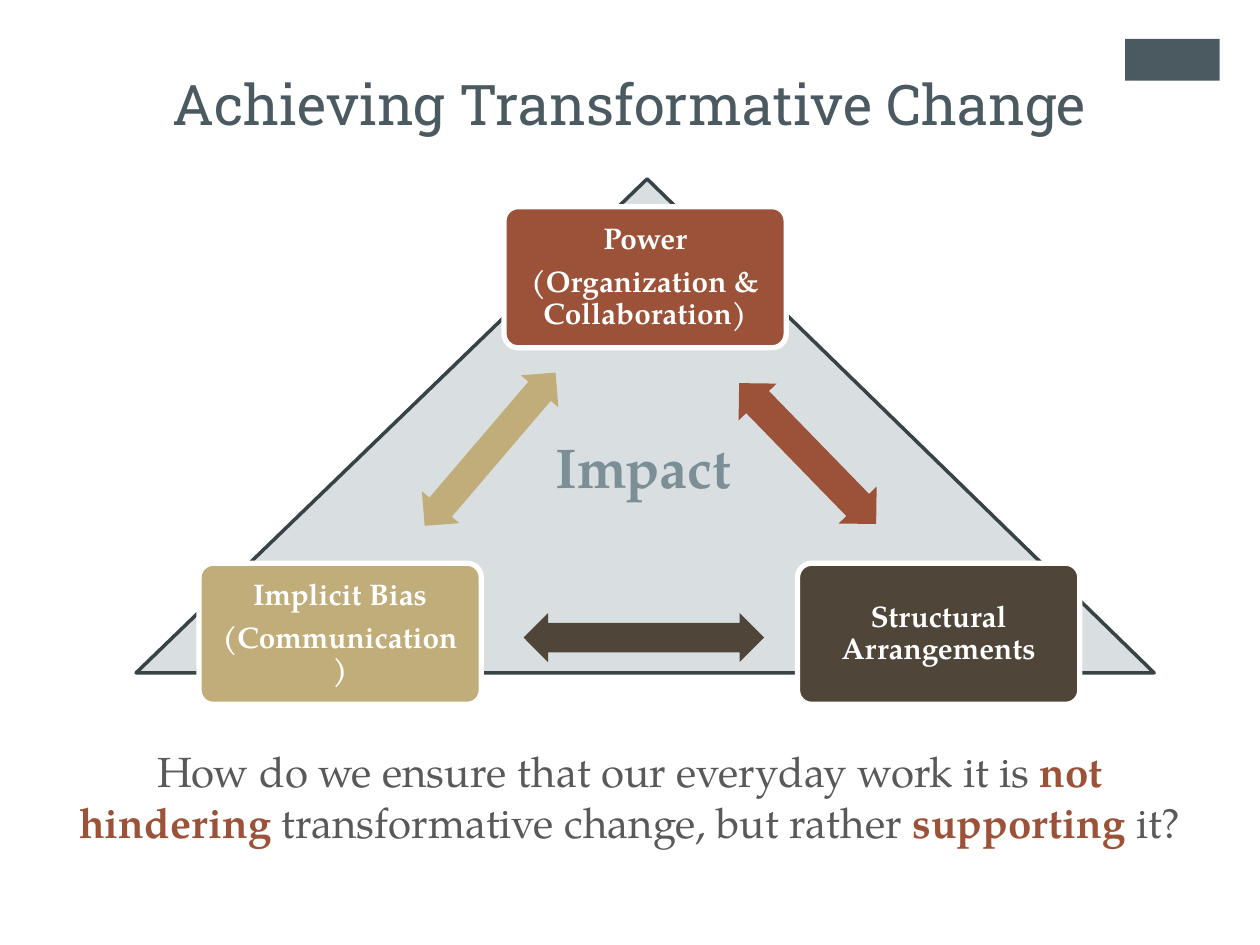
from dataclasses import dataclass
from pptx import Presentation
from pptx.dml.color import RGBColor
from pptx.enum.shapes import MSO_SHAPE
from pptx.enum.text import MSO_ANCHOR, PP_ALIGN
from pptx.util import Inches, Pt

COLS, ROWS = 100, 75


@dataclass(frozen=True)
class Theme:
    head: str = "Roboto Slab"
    body: str = "TeX Gyre Pagella"
    slate: str = "4B5A60"
    mist: str = "D9DFE1"
    edge: str = "374347"
    steel: str = "7C8F97"
    gray: str = "595959"
    rust: str = "9C5238"
    brown: str = "504539"
    sand: str = "C1AD79"
    white: str = "FFFFFF"
    big: int = 32
    mid: int = 24
    small: int = 17


class Deck:
    """Theme and current slide; lengths are columns and rows of the grid."""

    def __init__(self, theme):
        self.theme = theme
        self.file = Presentation()
        self.file.slide_width, self.file.slide_height = Inches(10), Inches(7.5)
        self.slide = self.file.slides.add_slide(self.file.slide_layouts[6])

    def area(self, left, top, width, height):
        col, row = self.file.slide_width / COLS, self.file.slide_height / ROWS
        return [round(n * unit) for n, unit in
                ((left, col), (top, row), (width, col), (height, row))]

    def shape(self, kind, area, fill, line=None, adjust=(), turn=0):
        item = self.slide.shapes.add_shape(kind, *self.area(*area))
        item.shadow.inherit = False
        item.rotation = turn
        for i, value in enumerate(adjust):
            item.adjustments[i] = value
        item.fill.solid()
        item.fill.fore_color.rgb = RGBColor.from_string(fill)
        if line:
            color, width = line
            item.line.color.rgb = RGBColor.from_string(color)
            item.line.width = Pt(width)
        else:
            item.line.fill.background()
        return item

    def put_text(self, frame, paras, font, form):
        """Fill a frame; each paragraph is a list of (text, color, bold) runs."""
        frame.word_wrap = True
        for i, runs in enumerate(paras):
            para = frame.paragraphs[0] if i == 0 else frame.add_paragraph()
            for key, value in form.items():
                setattr(para, key, value)
            for text, color, bold in runs:
                run = para.add_run()
                run.text = text
                for key, value in (font | {"bold": bold}).items():
                    setattr(run.font, key, value)
                run.font.color.rgb = RGBColor.from_string(color)

    def label(self, area, runs, face, size, align=PP_ALIGN.CENTER):
        box = self.slide.shapes.add_textbox(*self.area(*area))
        self.put_text(box.text_frame, [runs], {"name": face, "size": Pt(size)},
                      {"alignment": align})

    def node(self, left, top, fill, lines):
        look = self.theme
        item = self.shape(MSO_SHAPE.ROUNDED_RECTANGLE, (left, top, 22.4, 11.2),
                          fill, (look.white, 3), [0.1])
        item.text_frame.vertical_anchor = MSO_ANCHOR.MIDDLE
        self.put_text(item.text_frame,
                      [[(line, look.white, True)] for line in lines],
                      {"name": look.body, "size": Pt(look.small)},
                      {"alignment": PP_ALIGN.CENTER, "line_spacing": 0.9,
                       "space_after": Pt(6)})

    def arrow(self, mid, size, turn, fill):
        (x, y), (width, height) = mid, size
        self.shape(MSO_SHAPE.LEFT_RIGHT_ARROW,
                   (x - width / 2, y - height / 2, width, height),
                   fill, adjust=[0.6, 0.5], turn=turn)


def main():
    look = Theme()
    deck = Deck(look)
    deck.shape(MSO_SHAPE.RECTANGLE, (89.3, 3.1, 7.5, 3.3), look.slate)
    deck.shape(MSO_SHAPE.ISOSCELES_TRIANGLE, (10.8, 14.2, 80.8, 39.2),
               look.mist, (look.edge, 2), [0.502])

    base = 44.7
    for left, top, fill, lines in (
        (40, 16.4, look.rust, ["Power", "(Organization & Collaboration)"]),
        (63.3, base, look.brown, ["Structural Arrangements"]),
        (15.8, base, look.sand, ["Implicit Bias", "(Communication)"]),
    ):
        deck.node(left, top, fill, lines)

    for mid, size, turn, fill in (
        ((64.1, 36), (15.6, 4.2), 45.8, look.rust),
        ((51.1, 50.6), (19.1, 3.9), 0, look.brown),
        ((38.9, 35.65), (16, 3.9), 310.5, look.sand),
    ):
        deck.arrow(mid, size, turn, fill)

    deck.label((43.1, 33.8, 23.1, 12.5), [("Impact", look.steel, True)],
               look.body, look.big, PP_ALIGN.LEFT)
    deck.label((6.7, 5, 86.6, 8.6),
               [("Achieving Transformative Change", look.slate, False)],
               look.head, look.big)
    deck.label((5, 58.7, 90, 13.1), [
        ("How do we ensure that our everyday work it is ", look.gray, False),
        ("not hindering ", look.rust, True),
        ("transformative change, but rather ", look.gray, False),
        ("supporting ", look.rust, True),
        ("it?", look.gray, False),
    ], look.body, look.mid)
    deck.file.save("out.pptx")


if __name__ == "__main__":
    main()
